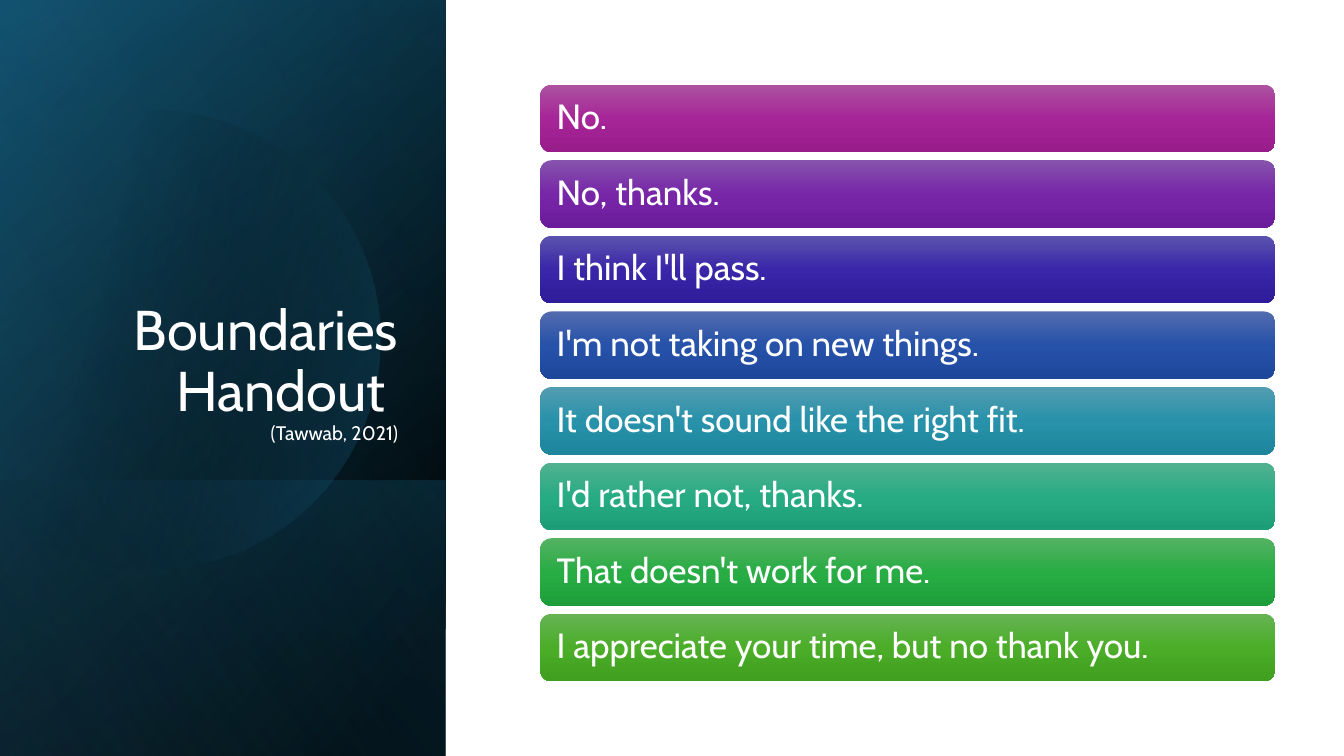
from dataclasses import dataclass
from math import acos, cos, radians, sin

from pptx import Presentation
from pptx.dml.color import RGBColor
from pptx.enum.shapes import MSO_SHAPE as Preset
from pptx.enum.text import MSO_ANCHOR as Anchor, MSO_AUTO_SIZE as AutoSize, PP_ALIGN as Align
from pptx.oxml import parse_xml
from pptx.oxml.ns import nsdecls
from pptx.util import Inches, Pt


@dataclass(frozen=True)
class Theme:
    font: str = "Cabin"
    text: RGBColor = RGBColor(0xFF, 0xFF, 0xFF)
    title_size: int = 40
    source_size: int = 14
    reply_size: int = 25
    night: str = "000000"
    navy: str = "104862"
    teal: str = "156082"
    sky: str = "46B1E1"


@dataclass(frozen=True)
class Box:
    left: float
    top: float
    width: float
    height: float

    def share(self, left, top, width, height):
        return Box(self.left + left * self.width, self.top + top * self.height,
                   width * self.width, height * self.height)

    def turned(self):
        shift = (self.width - self.height) / 2
        return Box(self.left + shift, self.top - shift, self.height, self.width)

    def emu(self):
        return [Inches(v) for v in (self.left, self.top, self.width, self.height)]


THEME = Theme()
PAGE = Box(0, 0, 13.333, 7.5)
PANEL = Box(0, 0, 4.42, 7.5)
LIST = Box(5.36, 0.84, 7.29, 5.92)

REPLIES = [
    ("No.", ("AC53A0", "A62598", "991C8B")),
    ("No, thanks.", ("8653AD", "7726A7", "6B1C9A")),
    ("I think I'll pass.", ("5C53AE", "3926A8", "2F1C9A")),
    ("I'm not taking on new things.", ("536BAF", "2652A9", "1D479B")),
    ("It doesn't sound like the right fit.", ("539CB0", "2792AA", "1D859C")),
    ("I'd rather not, thanks.", ("53B190", "27AB83", "1D9D77")),
    ("That doesn't work for me.", ("54B262", "28AC44", "1E9E3A")),
    ("I appreciate your time, but no thank you.", ("66B354", "4BAD28", "409F1E")),
]


def paint(shape, stops, angle):
    shape.shadow.inherit = False
    shape.line.fill.background()
    shape.fill.background()
    marks = "".join(
        f'<a:gs pos="{place * 1000}"><a:srgbClr val="{color}">'
        f'<a:alpha val="{opacity * 1000}"/></a:srgbClr></a:gs>'
        for place, color, opacity in stops)
    gradient = parse_xml(
        f'<a:gradFill {nsdecls("a")} rotWithShape="1"><a:gsLst>{marks}</a:gsLst>'
        f'<a:lin ang="{angle * 60000}" scaled="0"/></a:gradFill>')
    properties = shape._element.spPr
    properties.replace(properties.find("{*}noFill"), gradient)


def style(paragraph, size):
    paragraph.line_spacing = 0.9
    paragraph.font.name = THEME.font
    paragraph.font.size = Pt(size)
    paragraph.font.color.rgb = THEME.text


def add_wash(slide, box, stops, angle):
    wash = slide.shapes.add_shape(Preset.RECTANGLE, *box.turned().emu())
    wash.rotation = 90
    wash._element.spPr.xfrm.set("flipH", "1")
    paint(wash, stops, angle)


def add_disc(slide, box):
    center_x, center_y = box.left + 0.337 * box.width, box.top + 0.449 * box.height
    radius = 0.304 * box.height
    reach = acos((box.left - center_x) / radius)
    steps = 120
    angles = [reach * (2 * step / steps - 1) for step in range(steps + 1)]
    rim = [(Inches(center_x + radius * cos(a)), Inches(center_y + radius * sin(a)))
           for a in angles]
    builder = slide.shapes.build_freeform(*rim[0])
    builder.add_line_segments(rim[1:])
    paint(builder.convert_to_shape(), [(29, THEME.night, 0), (100, THEME.teal, 43)], 14)


def add_panel(slide, box):
    lower = box.share(0, 0.635, 1, 0.365)
    add_wash(slide, box, [(8, THEME.night, 100), (100, THEME.navy, 100)], 50)
    add_wash(slide, box, [(0, THEME.night, 0), (99, THEME.teal, 46)], 30)
    add_wash(slide, lower, [(2, THEME.teal, 29), (100, THEME.night, 30)], 130)
    add_disc(slide, box)
    add_wash(slide, box, [(0, THEME.night, 0), (99, THEME.sky, 11)], 120)


def add_title(slide, box):
    title = slide.shapes.title
    title.left, title.top, title.width, title.height = box.share(0.145, 0.245, 0.771, 0.35).emu()
    slide.shapes._spTree.append(title._element)
    frame = title.text_frame
    frame.auto_size = AutoSize.NONE
    frame.vertical_anchor = Anchor.BOTTOM
    heading = frame.paragraphs[0]
    heading.alignment = Align.RIGHT
    style(heading, THEME.title_size)
    heading.add_run().text = "Boundaries Handout "
    heading.add_line_break()
    source = heading.add_run()
    source.text = "(Tawwab, 2021)"
    source.font.size = Pt(THEME.source_size)


def add_replies(slide, box):
    gap = 0.08
    height = (box.height + gap) / len(REPLIES) - gap
    for row, (reply, colors) in enumerate(REPLIES):
        place = Box(box.left, box.top + row * (height + gap), box.width, height)
        bar = slide.shapes.add_shape(Preset.ROUNDED_RECTANGLE, *place.emu())
        paint(bar, [(at, color, 100) for at, color in zip((0, 50, 100), colors)], 90)
        frame = bar.text_frame
        frame.word_wrap = True
        frame.vertical_anchor = Anchor.MIDDLE
        frame.margin_left = frame.margin_right = Inches(0.13)
        line = frame.paragraphs[0]
        line.text = reply
        line.alignment = Align.LEFT
        style(line, THEME.reply_size)


def main():
    deck = Presentation()
    deck.slide_width, deck.slide_height = Inches(PAGE.width), Inches(PAGE.height)
    slide = deck.slides.add_slide(deck.slide_layouts[5])
    add_panel(slide, PANEL)
    add_title(slide, PANEL)
    add_replies(slide, LIST)
    deck.save("out.pptx")


if __name__ == "__main__":
    main()
